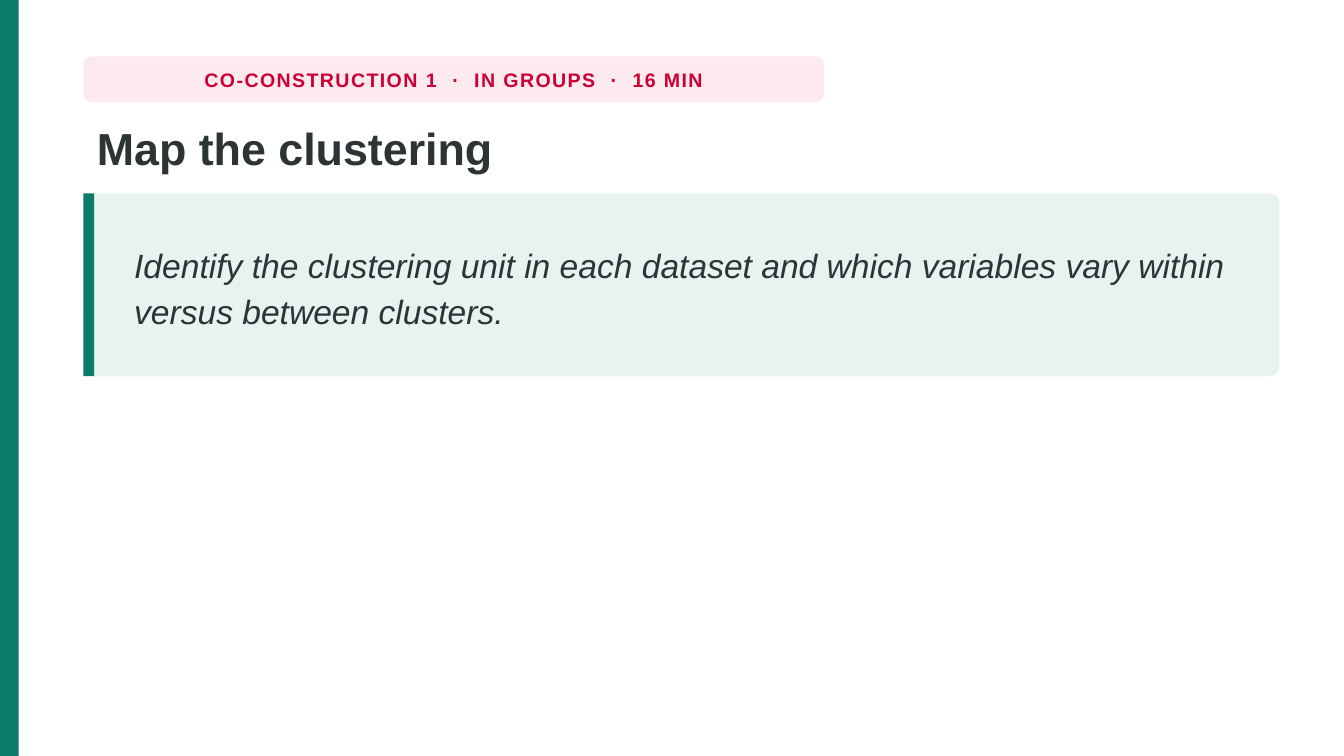
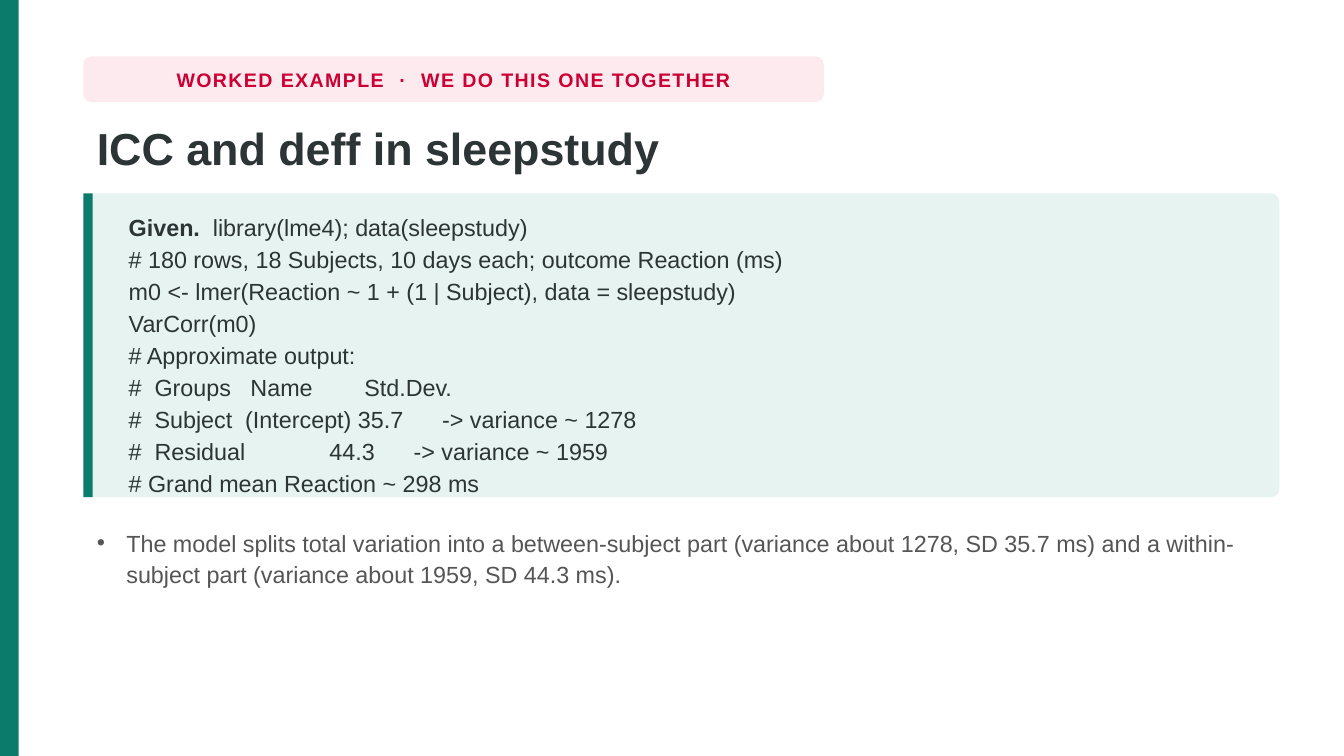
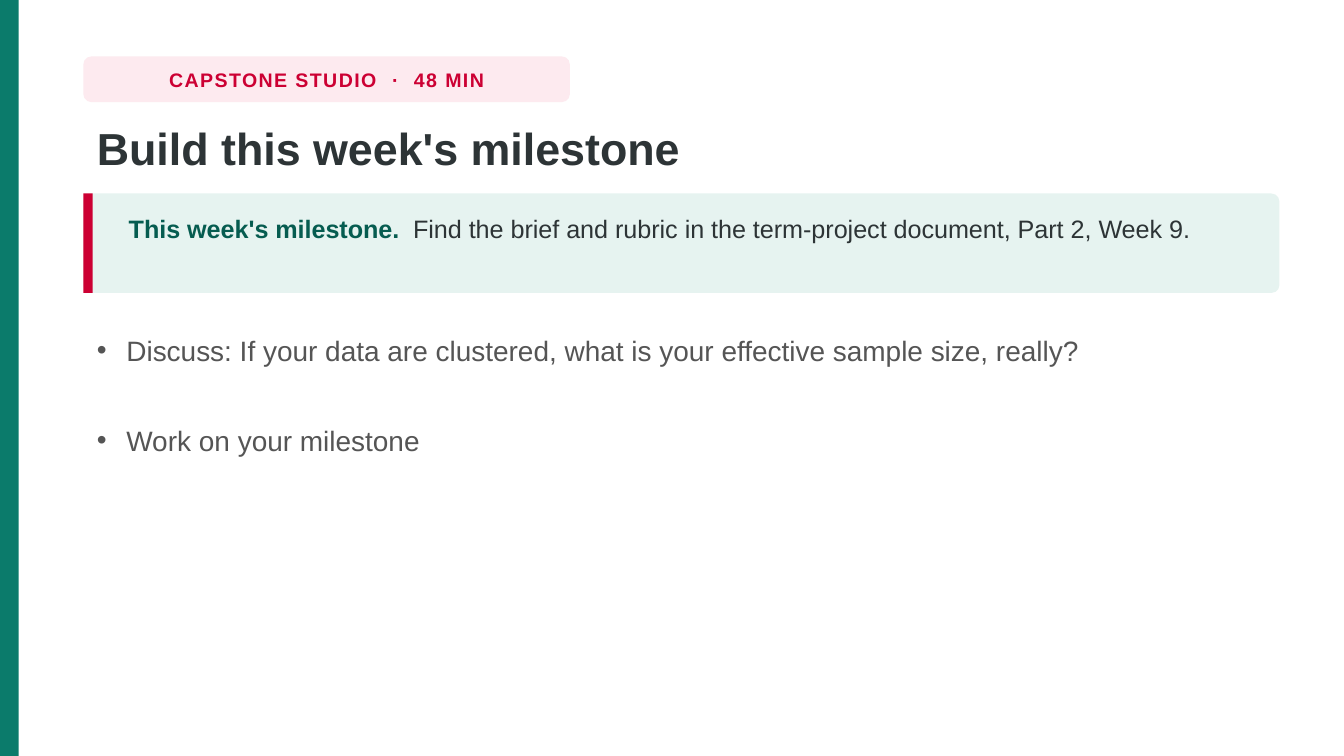
from pptx import Presentation
from pptx.dml.color import RGBColor
from pptx.enum import shapes, text
from pptx.util import Inches, Pt

FONT = "Arial"
GREEN, DARK_GREEN, MINT = "0B7B6B", "065C50", "E6F3F0"
RED, PINK = "CC0033", "FDEAEF"
INK, GREY = "2D3436", "555555"
SLIDE_WIDTH = 10
SLIDE_HEIGHT = SLIDE_WIDTH * 9 / 16
LEFT, WIDTH, CALLOUT_TOP = 0.62, 8.9, 1.44
TITLE_ONLY, TITLE_AND_BODY = 5, 1

SLEEPSTUDY_CODE = [
    "library(lme4); data(sleepstudy)",
    "# 180 rows, 18 Subjects, 10 days each; outcome Reaction (ms)",
    "m0 <- lmer(Reaction ~ 1 + (1 | Subject), data = sleepstudy)",
    "VarCorr(m0)",
    "# Approximate output:",
    "#  Groups   Name        Std.Dev.",
    "#  Subject  (Intercept) 35.7      -> variance ~ 1278",
    "#  Residual             44.3      -> variance ~ 1959",
    "# Grand mean Reaction ~ 298 ms",
]


def rgb(color):
    return RGBColor.from_string(color)


def style(font, size, color, bold=False, italic=False):
    font.name, font.size = FONT, Pt(size)
    font.bold, font.italic = bold, italic
    font.color.rgb = rgb(color)


def add_run(p, words, tracking=0):
    """Add a run with letter spacing in points."""
    r = p.add_run()
    r.text = words
    if tracking:
        r._r.get_or_add_rPr().set("spc", str(round(tracking * 100)))
    return r


def add_block(slide, left, top, width, height, color, radius=0):
    """Add a plain filled rectangle, rounded if a radius is given."""
    kind = shapes.MSO_SHAPE.ROUNDED_RECTANGLE if radius else shapes.MSO_SHAPE.RECTANGLE
    sp = slide.shapes.add_shape(kind, Inches(left), Inches(top), Inches(width), Inches(height))
    if radius:
        sp.adjustments[0] = radius / height
    sp.shadow.inherit = False
    sp.fill.solid()
    sp.fill.fore_color.rgb = rgb(color)
    sp.line.fill.background()
    return sp


def place(sp, left, top, width, height):
    """Position a text shape and return its top-anchored, wrapping text frame."""
    sp.left, sp.top = Inches(left), Inches(top)
    sp.width, sp.height = Inches(width), Inches(height)
    tf = sp.text_frame
    tf.word_wrap = True
    tf.auto_size = text.MSO_AUTO_SIZE.NONE
    tf.vertical_anchor = text.MSO_ANCHOR.TOP
    return tf


def add_badge(slide, parts, width):
    sp = add_block(slide, LEFT, 0.42, width, 0.34, PINK, radius=0.06)
    tf = sp.text_frame
    tf.word_wrap = False
    tf.vertical_anchor = text.MSO_ANCHOR.MIDDLE
    p = tf.paragraphs[0]
    p.alignment = text.PP_ALIGN.CENTER
    style(p.font, 10.5, RED, bold=True)
    for i, part in enumerate(parts):
        if i:
            add_run(p, " ", tracking=4.5)
            add_run(p, "·", tracking=0.8)
            add_run(p, " ", tracking=4.5)
        add_run(p, part, tracking=0.8)


def add_slide(prs, layout, title, badge, badge_width=5.51):
    """Add a slide with the shared side band, badge and title."""
    slide = prs.slides.add_slide(prs.slide_layouts[layout])
    add_block(slide, 0, 0, 0.14, SLIDE_HEIGHT, GREEN)
    add_badge(slide, badge, badge_width)
    tf = place(slide.shapes.title, LEFT, 0.84, WIDTH, 0.56)
    tf.text = title
    p = tf.paragraphs[0]
    p.alignment = text.PP_ALIGN.LEFT
    p.line_spacing = 1.02
    style(p.font, 24, INK, bold=True)
    return slide


def add_callout(slide, height, accent, accent_width=0.07, radius=0.06):
    add_block(slide, LEFT, CALLOUT_TOP, WIDTH, height, MINT, radius)
    add_block(slide, LEFT, CALLOUT_TOP, accent_width, height, accent)


def add_callout_text(slide, left, width, height, lines, size, spacing, pad=0.07,
                     lead=None, lead_color=INK, italic=False):
    """Write the callout's lines, the first one after an optional bold lead."""
    sp = slide.shapes.add_textbox(0, 0, 0, 0)
    tf = place(sp, left, CALLOUT_TOP + pad, width, height - 2 * pad)
    for i, line in enumerate(lines):
        p = tf.add_paragraph() if i else tf.paragraphs[0]
        p.line_spacing = spacing
        style(p.font, size, INK, italic=italic)
        if lead and i == 0:
            style(add_run(p, lead).font, size, lead_color, bold=True)
            add_run(p, " ", tracking=3.5)
        add_run(p, line)
    return tf


def fill_bullets(slide, top, height, items, size, gap=0):
    tf = place(slide.placeholders[1], LEFT, top, WIDTH, height)
    for i, item in enumerate(items):
        p = tf.add_paragraph() if i else tf.paragraphs[0]
        p.text = item
        p.line_spacing = 1.12
        p.space_before = Pt(gap if i else 0)
        pPr = p._p.get_or_add_pPr()
        pPr.set("marL", str(Inches(0.22)))
        pPr.set("indent", str(Inches(-0.22)))
        style(p.font, size, GREY)


def add_clustering_slide(prs):
    slide = add_slide(prs, TITLE_ONLY, "Map the clustering",
                      ["CO-CONSTRUCTION 1", "IN GROUPS", "16 MIN"])
    add_callout(slide, 1.36, GREEN, accent_width=0.08, radius=0.07)
    tf = add_callout_text(
        slide, 0.9, 8.35, 1.36,
        ["Identify the clustering unit in each dataset and which variables vary "
         "within versus between clusters."],
        18, 1.16, pad=0.05, italic=True)
    tf.vertical_anchor = text.MSO_ANCHOR.MIDDLE


def add_sleepstudy_slide(prs):
    slide = add_slide(prs, TITLE_AND_BODY, "ICC and deff in sleepstudy",
                      ["WORKED EXAMPLE", "WE DO THIS ONE TOGETHER"])
    add_callout(slide, 2.26, GREEN)
    add_callout_text(slide, 0.86, 8.4, 2.26, SLEEPSTUDY_CODE, 12.5, 1.14, lead="Given.")
    fill_bullets(slide, 3.86, 0.71, [
        "The model splits total variation into a between-subject part (variance about "
        "1278, SD 35.7 ms) and a within-subject part (variance about 1959, SD 44.3 ms).",
    ], 12.5)


def add_milestone_slide(prs):
    slide = add_slide(prs, TITLE_AND_BODY, "Build this week's milestone",
                      ["CAPSTONE STUDIO", "48 MIN"], badge_width=3.62)
    add_callout(slide, 0.74, RED)
    add_callout_text(
        slide, 0.86, 8.4, 0.74,
        ["Find the brief and rubric in the term-project document, Part 2, Week 9."],
        13.5, 1.14, lead="This week's milestone.", lead_color=DARK_GREEN)
    fill_bullets(slide, 2.4, 0.97, [
        "Discuss: If your data are clustered, what is your effective sample size, really?",
        "Work on your milestone",
    ], 15, gap=28)


def main():
    prs = Presentation()
    prs.slide_width, prs.slide_height = Inches(SLIDE_WIDTH), Inches(SLIDE_HEIGHT)
    add_clustering_slide(prs)
    add_sleepstudy_slide(prs)
    add_milestone_slide(prs)
    prs.save("out.pptx")


if __name__ == "__main__":
    main()
